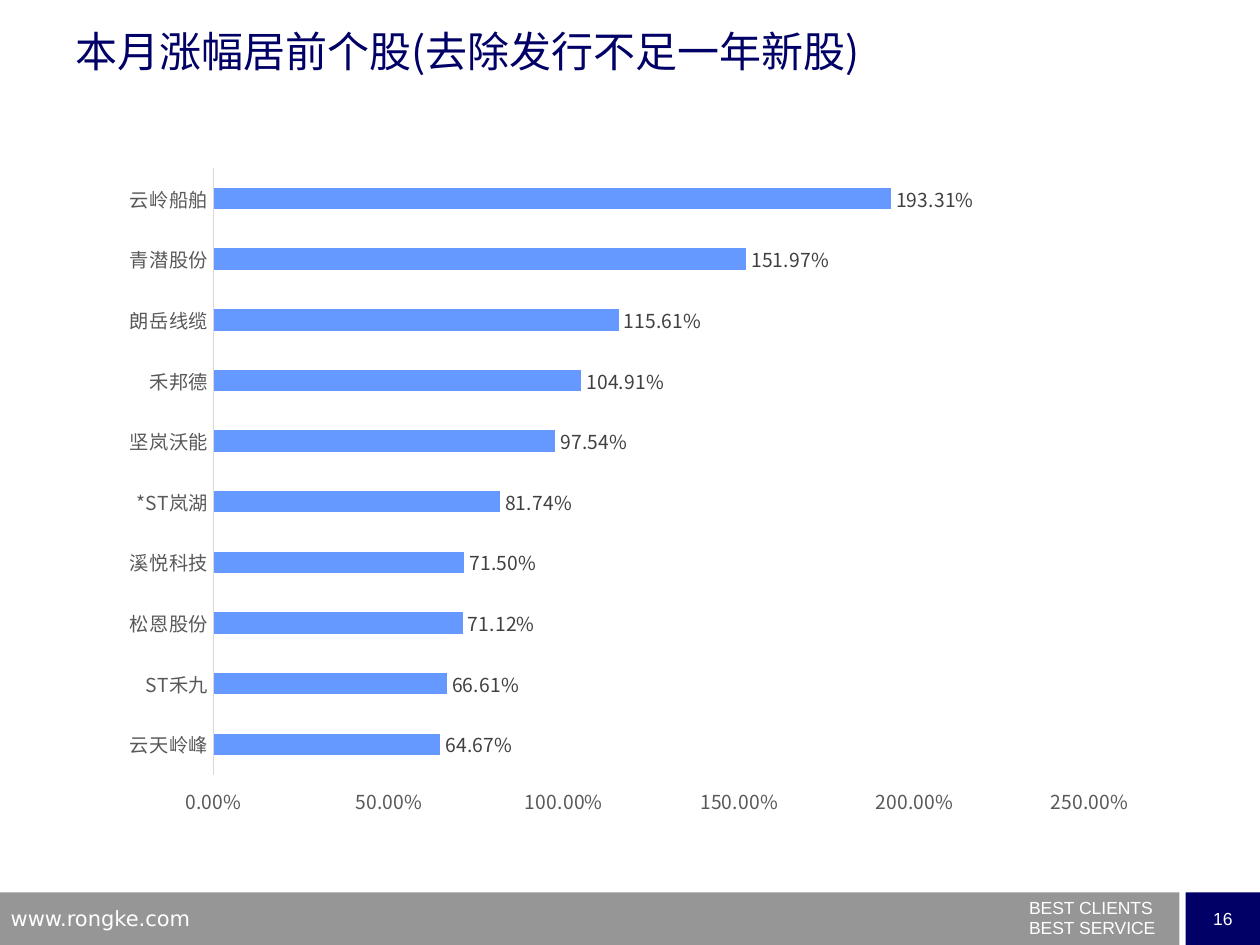
from dataclasses import dataclass

from pptx import Presentation
from pptx.chart.data import CategoryChartData
from pptx.dml.color import RGBColor
from pptx.enum.chart import (XL_CHART_TYPE, XL_LABEL_POSITION,
                             XL_TICK_LABEL_POSITION, XL_TICK_MARK)
from pptx.enum.shapes import MSO_SHAPE
from pptx.enum.text import MSO_ANCHOR, PP_ALIGN
from pptx.oxml import parse_xml
from pptx.oxml.ns import nsdecls
from pptx.util import Pt


@dataclass(frozen=True)
class Theme:
    navy: str = "000066"
    gray: str = "969696"
    white: str = "FFFFFF"
    bar: str = "6699FF"
    axis_line: str = "D9D9D9"
    axis_text: str = "595959"
    label_text: str = "404040"
    cjk: str = "Noto Sans CJK SC"
    sans: str = "Arial"
    web: str = "DejaVu Sans"
    title_size: int = 24
    web_size: int = 12
    chart_size: int = 11
    small_size: int = 10


T = Theme()
PERCENT = "0.00%"
GAINS = {
    "云岭船舶": 1.9331, "青潜股份": 1.5197, "朗岳线缆": 1.1561, "禾邦德": 1.0491,
    "坚岚沃能": 0.9754, "*ST岚湖": 0.8174, "溪悦科技": 0.715, "松恩股份": 0.7112,
    "ST禾九": 0.6661, "云天岭峰": 0.6467,
}


def set_font(font, name, size, color):
    for key, value in {"name": name, "size": Pt(size)}.items():
        setattr(font, key, value)
    font.color.rgb = RGBColor.from_string(color)


def add_run(p, text, name, size, color):
    r = p.add_run()
    r.text = text
    set_font(r.font, name, size, color)
    r.font._element.append(
        parse_xml(f'<a:ea {nsdecls("a")} typeface="{name}"/>'))


def add_block(s, box, color):
    sp = s.shapes.add_shape(MSO_SHAPE.RECTANGLE, *map(Pt, box))
    sp.shadow.inherit = False
    sp.fill.solid()
    sp.fill.fore_color.rgb = RGBColor.from_string(color)
    sp.line.fill.background()
    return sp


def add_text(s, box, lines, name, size, color, **spacing):
    """Add one paragraph per line; spacing holds paragraph format values."""
    tf = s.shapes.add_textbox(*map(Pt, box)).text_frame
    tf.word_wrap = True
    for i, line in enumerate(lines):
        p = tf.paragraphs[0] if i == 0 else tf.add_paragraph()
        for key, value in spacing.items():
            if i or key != "space_before":
                setattr(p, key, value)
        add_run(p, line, name, size, color)


def add_footer(s):
    add_block(s, (0, 510, 674, 30), T.gray)
    tf = add_block(s, (677.5, 510, 42.5, 30), T.navy).text_frame
    for key, value in {"word_wrap": False,
                       "vertical_anchor": MSO_ANCHOR.MIDDLE}.items():
        setattr(tf, key, value)
    p = tf.paragraphs[0]
    p.alignment = PP_ALIGN.CENTER
    add_run(p, "16", T.sans, T.small_size, T.white)
    add_text(s, (581, 514, 138, 25), ["BEST CLIENTS", "BEST SERVICE"],
             T.sans, T.small_size, T.white, line_spacing=0.5, space_before=Pt(5.5))
    add_text(s, (-1, 514, 174, 19), ["www.rongke.com"],
             T.web, T.web_size, T.white)


def set_plot_layout(chart, **fractions):
    """Fix the inner plot area as fractions of the chart frame."""
    area = chart._chartSpace.chart.plotArea
    for old in area.findall("{*}layout"):
        area.remove(old)
    values = "".join(f'<c:{k} val="{v}"/>' for k, v in fractions.items())
    area.insert(0, parse_xml(
        f'<c:layout {nsdecls("c")}><c:manualLayout><c:layoutTarget val="inner"/>'
        f'<c:xMode val="edge"/><c:yMode val="edge"/>{values}'
        '</c:manualLayout></c:layout>'))


def add_gains_chart(s, box):
    data = CategoryChartData(number_format=PERCENT)
    data.categories = list(GAINS)
    data.add_series("Series 1", GAINS.values())
    chart = s.shapes.add_chart(XL_CHART_TYPE.BAR_CLUSTERED,
                               *map(Pt, box), data).chart
    chart.has_legend = chart.has_title = False
    set_font(chart.font, T.cjk, T.chart_size, T.axis_text)
    set_plot_layout(chart, x=0.1, y=0.02, w=0.84, h=0.9)

    cat, val = chart.category_axis, chart.value_axis
    for axis in (cat, val):
        for key, value in {"major_tick_mark": XL_TICK_MARK.NONE,
                           "minor_tick_mark": XL_TICK_MARK.NONE,
                           "has_major_gridlines": False}.items():
            setattr(axis, key, value)
        set_font(axis.tick_labels.font, T.cjk, T.chart_size, T.axis_text)
    cat.reverse_order = True
    cat.format.line.width = Pt(0.75)
    cat.format.line.color.rgb = RGBColor.from_string(T.axis_line)
    for key, value in {"minimum_scale": 0, "maximum_scale": 2.5,
                       "major_unit": 0.5,
                       "tick_label_position": XL_TICK_LABEL_POSITION.HIGH}.items():
        setattr(val, key, value)
    val.format.line.fill.background()

    plot = chart.plots[0]
    plot.gap_width = 182
    plot.vary_by_categories = False
    series = plot.series[0]
    series.format.fill.solid()
    series.format.fill.fore_color.rgb = RGBColor.from_string(T.bar)
    labels = series.data_labels
    for numbers in (val.tick_labels, labels):
        numbers.number_format = PERCENT
        numbers.number_format_is_linked = False
    labels.show_value = True
    labels.position = XL_LABEL_POSITION.OUTSIDE_END
    set_font(labels.font, T.cjk, T.chart_size, T.label_text)


def main():
    prs = Presentation()
    prs.slide_width, prs.slide_height = Pt(720), Pt(540)
    s = prs.slides.add_slide(prs.slide_layouts[6])
    add_footer(s)
    add_text(s, (36, 11, 648, 90), ["本月涨幅居前个股(去除发行不足一年新股)"],
             T.cjk, T.title_size, T.navy)
    add_gains_chart(s, (62.5, 88.5, 596, 385))
    prs.save("out.pptx")


if __name__ == "__main__":
    main()
